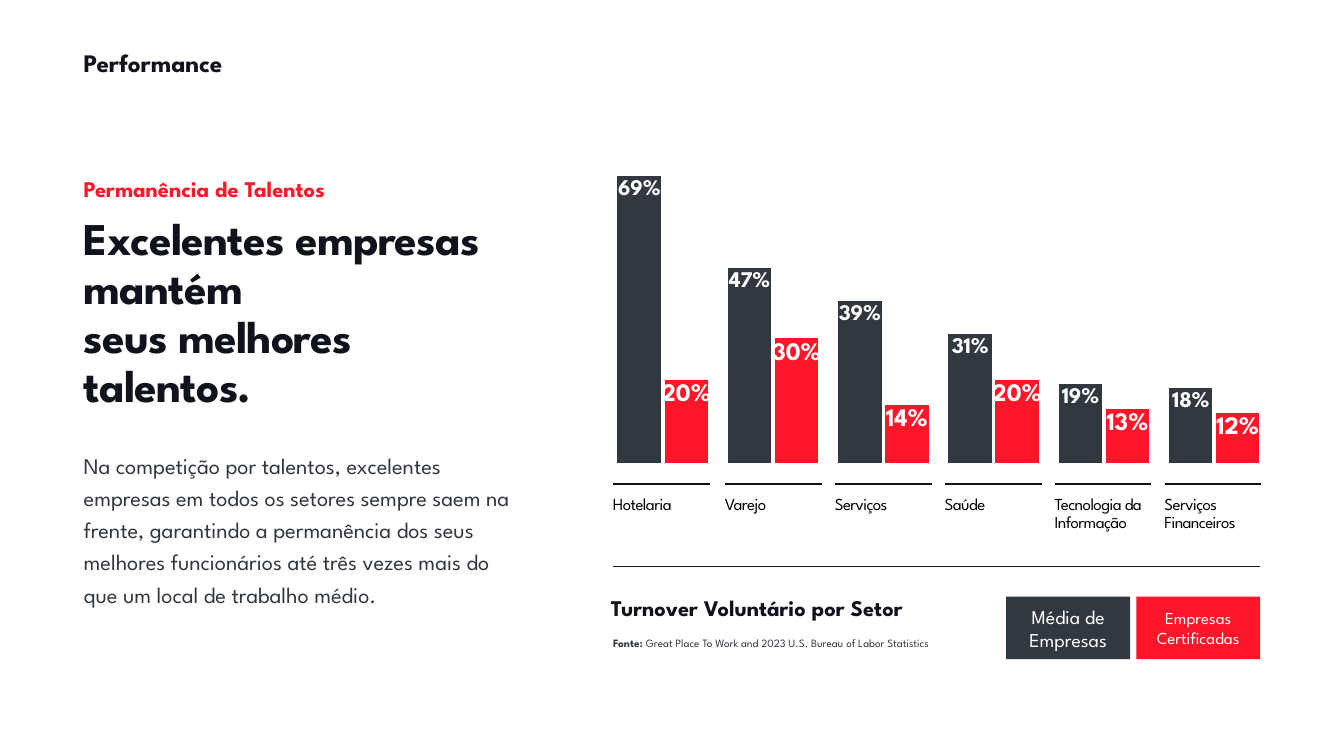
from lxml import etree
from pptx import Presentation
from pptx.chart.data import CategoryChartData
from pptx.dml.color import RGBColor
from pptx.enum.chart import XL_CHART_TYPE, XL_LABEL_POSITION
from pptx.enum.shapes import MSO_CONNECTOR, MSO_SHAPE
from pptx.enum.text import MSO_ANCHOR, PP_ALIGN
from pptx.oxml.ns import qn
from pptx.util import Pt

PX = 9144  # 100 px to the inch
FONT = "League Spartan"
INK = RGBColor(0x11, 0x13, 0x1C)
GRAY = RGBColor(0x32, 0x38, 0x3F)
RED = RGBColor(0xFF, 0x16, 0x28)
WHITE = RGBColor(0xFF, 0xFF, 0xFF)
BLACK = RGBColor(0, 0, 0)

COLUMN = XL_CHART_TYPE.COLUMN_CLUSTERED
INSIDE = XL_LABEL_POSITION.INSIDE_END
LINE = MSO_CONNECTOR.STRAIGHT
RECT = MSO_SHAPE.RECTANGLE
TOP, MIDDLE, BOTTOM = MSO_ANCHOR.TOP, MSO_ANCHOR.MIDDLE, MSO_ANCHOR.BOTTOM
CENTER = PP_ALIGN.CENTER

SECTORS = ["Hotelaria", "Varejo", "Serviços", "Saúde",
           "Tecnologia da\nInformação", "Serviços Financeiros"]
LEFTS = [608, *range(719, 1156, 109)]
# name, values, color, label size
SERIES = [
    ("Média de Empresas", (0.69, 0.47, 0.39, 0.31, 0.19, 0.18), GRAY, 16),
    ("Empresas Certificadas", (0.2, 0.3, 0.14, 0.2, 0.13, 0.12), RED, 18),
]
PLOT = {"x": 0.016, "y": 0.013, "w": 0.984, "h": 0.942}


def scale(*box):
    return [n * PX for n in box]


def style(font, size, color, bold=False):
    font.name = FONT
    font.size = Pt(size)
    font.color.rgb = color
    font.bold = bold


def add_text(slide, box, text, size, color, bold=False, space=1.2,
             track=0, anchor=TOP):
    frame = slide.shapes.add_textbox(*scale(*box)).text_frame
    frame.word_wrap = True
    frame.margin_left = frame.margin_right = 0
    frame.margin_top = frame.margin_bottom = 0
    frame.vertical_anchor = anchor
    frame.text = text
    for para in frame.paragraphs:
        para.line_spacing = space
        for run in para.runs:
            style(run.font, size, color, bold)
            if track:
                run._r.get_or_add_rPr().set("spc", str(track))
    return frame


def add_rule(slide, left, right, y):
    rule = slide.shapes.add_connector(LINE, *scale(left, y, right, y))
    rule.line.color.rgb = INK
    rule.line.width = Pt(1)
    etree.SubElement(rule._element.spPr, qn("a:effectLst"))


def add_key(slide, left, text, size, color):
    key = slide.shapes.add_shape(RECT, *scale(left, 592, 123, 62))
    key.shadow.inherit = False
    key.fill.solid()
    key.fill.fore_color.rgb = color
    key.line.fill.background()
    frame = key.text_frame
    frame.word_wrap = True
    frame.vertical_anchor = MIDDLE
    frame.text = text
    para = frame.paragraphs[0]
    para.alignment = CENTER
    style(para.runs[0].font, size, WHITE)


def set_plot(chart):
    area = chart._chartSpace.chart.plotArea
    old = area.find(qn("c:layout"))
    if old is not None:
        area.remove(old)
    layout = etree.Element(qn("c:layout"))
    area.insert(0, layout)
    manual = etree.SubElement(layout, qn("c:manualLayout"))
    parts = {"layoutTarget": "inner", "xMode": "edge", "yMode": "edge", **PLOT}
    for tag, val in parts.items():
        etree.SubElement(manual, qn(f"c:{tag}")).set("val", str(val))


def add_bars(slide):
    data = CategoryChartData(number_format="0%")
    data.categories = [name.replace("\n", " ") for name in SECTORS]
    for name, vals, _, _ in SERIES:
        data.add_series(name, vals)
    box = scale(592, 125, 667, 350)
    chart = slide.shapes.add_chart(COLUMN, *box, data).chart
    chart.has_title = chart.has_legend = False
    style(chart.font, 10, INK)
    axis = chart.value_axis
    axis.minimum_scale, axis.maximum_scale = 0, 0.8
    axis.has_major_gridlines = False
    axis.visible = chart.category_axis.visible = False
    set_plot(chart)
    plot = chart.plots[0]
    plot.vary_by_categories = False
    plot.gap_width, plot.overlap = 45, -8
    for bars, (_, _, color, size) in zip(plot.series, SERIES):
        bars.format.fill.solid()
        bars.format.fill.fore_color.rgb = color
        tags = bars.data_labels
        tags.show_value = True
        tags.position = INSIDE
        tags.number_format = "0%"
        tags.number_format_is_linked = False
        style(tags.font, size, WHITE, True)


def main():
    prs = Presentation()
    prs.slide_width, prs.slide_height = scale(1333, 750)
    slide = prs.slides.add_slide(prs.slide_layouts[6])

    # Left column
    add_text(slide, (83, 41, 500, 42), "Performance", 18, INK, True)
    add_text(slide, (83, 168, 458, 42), "Permanência de Talentos",
             16, RED, True)
    add_text(slide, (83, 242, 429, 167),
             "Excelentes empresas mantém\vseus melhores talentos.",
             32.4, INK, True, 0.9, -50, BOTTOM)
    add_text(slide, (83, 443, 429, 251),
             "Na competição por talentos, excelentes empresas em todos os "
             "setores sempre saem na frente, garantindo a permanência dos "
             "seus melhores funcionários até três vezes mais do que um local "
             "de trabalho médio.", 16, GRAY)

    # Chart with its sector names
    add_bars(slide)
    for left, name in zip(LEFTS, SECTORS):
        add_rule(slide, left, left + 96, 480)
        add_text(slide, (left, 492, 96, 35), name, 12, BLACK,
                 space=0.9, track=-40)

    # Caption, source and key
    add_rule(slide, 608, 1250, 562)
    add_text(slide, (606, 584, 458, 42), "Turnover Voluntário por Setor",
             16, INK, True)
    credit = add_text(slide, (608, 629, 429, 21), "Fonte: ", 8, GRAY, True)
    run = credit.paragraphs[0].add_run()
    run.text = "Great Place To Work and 2023 U.S. Bureau of Labor Statistics"
    style(run.font, 8, GRAY)
    for left, size, (name, _, color, _) in zip((998, 1127), (14, 12), SERIES):
        add_key(slide, left, name, size, color)

    prs.save("out.pptx")


if __name__ == "__main__":
    main()
